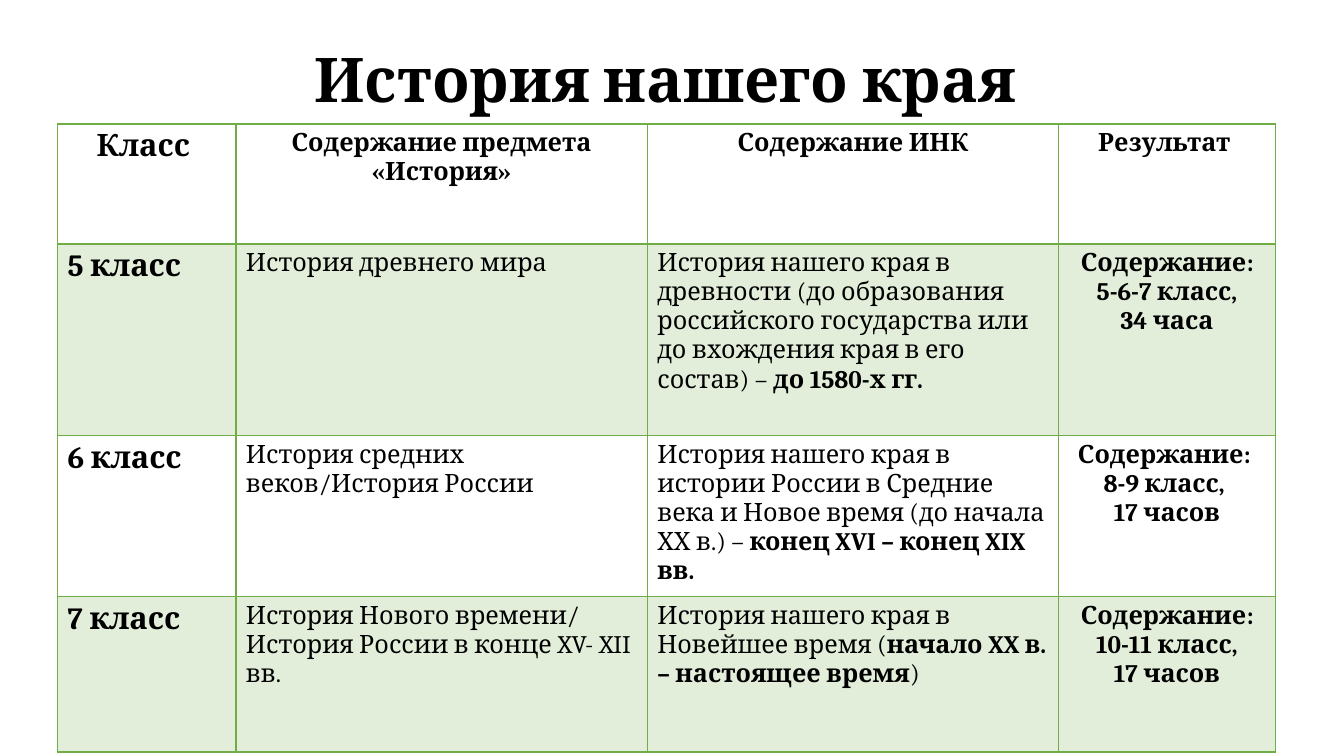
from dataclasses import dataclass

from lxml import etree
from pptx import Presentation
from pptx.dml.color import RGBColor
from pptx.enum.text import MSO_ANCHOR, PP_ALIGN
from pptx.oxml.ns import qn
from pptx.util import Inches, Pt

CENTER, LEFT = PP_ALIGN.CENTER, PP_ALIGN.LEFT
MIDDLE = MSO_ANCHOR.MIDDLE

# Content: each cell is a list of paragraphs, each paragraph a list of (text, bold)
TITLE = "История нашего края "
HEADER = ["Класс ", "Содержание предмета «История»", "Содержание ИНК", "Результат "]
LESSONS = [
    ("5 класс", "История древнего мира",
     [("История нашего края в древности (до образования российского государства "
       "или до вхождения края в его состав) – ", False), ("до 1580-х гг.", True)],
     ["Содержание:", " 5-6-7 класс, ", "34 часа"]),
    ("6 класс", "История средних веков/История России",
     [("История нашего края в истории России в Средние века и Новое время "
       "(до начала ХХ в.) – ", False), ("конец XVI – конец XIX вв.", True)],
     ["Содержание: ", "8-9 класс, ", "17 часов"]),
    ("7 класс", "История Нового времени/ История России в конце XV- XII вв.",
     [("История нашего края в Новейшее время (", False),
      ("начало XX в. – настоящее время", True), (")", False)],
     ["Содержание: 10-11 класс,", "17 часов"]),
]


@dataclass(frozen=True)
class Theme:
    font: str = "Cambria"
    ink: str = "000000"
    green: str = "70AD47"
    band_alpha: int = 20
    title_size: int = 44
    class_size: int = 22
    body_size: int = 18
    thin: float = 1
    thick: float = 2


THEME = Theme()

# Layout in inches
WIDTH, HEIGHT = 13.33, 7.5
TITLE_BOX = (0.92, 0.4, 11.5, 0.83)
TABLE_LEFT, TABLE_TOP = 0.57, 1.23
COLUMNS = [1.77, 4.08, 4.08, 2.15]
ROWS = [1.19, 1.9, 1.19, 1.54]


def write(frame, paragraphs, size, align):
    for index, spans in enumerate(paragraphs):
        para = frame.paragraphs[0] if index == 0 else frame.add_paragraph()
        para.alignment = align
        for text, bold in spans:
            span = para.add_run()
            span.text = text
            formats = {"name": THEME.font, "size": Pt(size), "bold": bold}
            for name, value in formats.items():
                setattr(span.font, name, value)
            span.font.color.rgb = RGBColor.from_string(THEME.ink)


def add_color(parent, color, alpha=None):
    solid = etree.SubElement(parent, qn("a:solidFill"))
    tint = etree.SubElement(solid, qn("a:srgbClr"), val=color)
    if alpha is not None:
        etree.SubElement(tint, qn("a:alpha"), val=str(alpha * 1000))


def style_cell(cell, widths, banded):
    properties = cell._tc.get_or_add_tcPr()
    for side, width in widths.items():
        line = etree.SubElement(properties, qn(f"a:ln{side}"), w=str(Pt(width)))
        add_color(line, THEME.green)
    if banded:
        add_color(properties, THEME.green, THEME.band_alpha)
    else:
        cell.fill.background()


def add_title(page):
    box = page.shapes.add_textbox(*map(Inches, TITLE_BOX))
    frame = box.text_frame
    frame.word_wrap = True
    frame.vertical_anchor = MIDDLE
    write(frame, [[(TITLE, True)]], THEME.title_size, CENTER)
    frame.paragraphs[0].line_spacing = 0.9


def add_lessons(page):
    area = map(Inches, (TABLE_LEFT, TABLE_TOP, sum(COLUMNS), sum(ROWS)))
    table = page.shapes.add_table(len(ROWS), len(COLUMNS), *area).table
    table.first_row = table.horz_banding = False
    for column, width in zip(table.columns, COLUMNS):
        column.width = Inches(width)
    for row, height in zip(table.rows, ROWS):
        row.height = Inches(height)

    grid = [[[[(text, True)]] for text in HEADER]]
    for grade, subject, local, result in LESSONS:
        grid.append([[[(grade, True)]], [[(subject, False)]], [local],
                     [[(text, True)] for text in result]])

    for r, cells in enumerate(grid):
        widths = {"L": THEME.thin, "R": THEME.thin,
                  "T": THEME.thick if r == 1 else THEME.thin,
                  "B": THEME.thick if r == 0 else THEME.thin}
        for c, paragraphs in enumerate(cells):
            cell = table.cell(r, c)
            size = THEME.class_size if c == 0 else THEME.body_size
            centered = r == 0 or c == len(COLUMNS) - 1
            write(cell.text_frame, paragraphs, size, CENTER if centered else LEFT)
            style_cell(cell, widths, banded=r % 2 == 1)


def main():
    deck = Presentation()
    deck.slide_width, deck.slide_height = Inches(WIDTH), Inches(HEIGHT)
    page = deck.slides.add_slide(deck.slide_layouts[6])
    add_title(page)
    add_lessons(page)
    deck.save("out.pptx")


if __name__ == "__main__":
    main()
